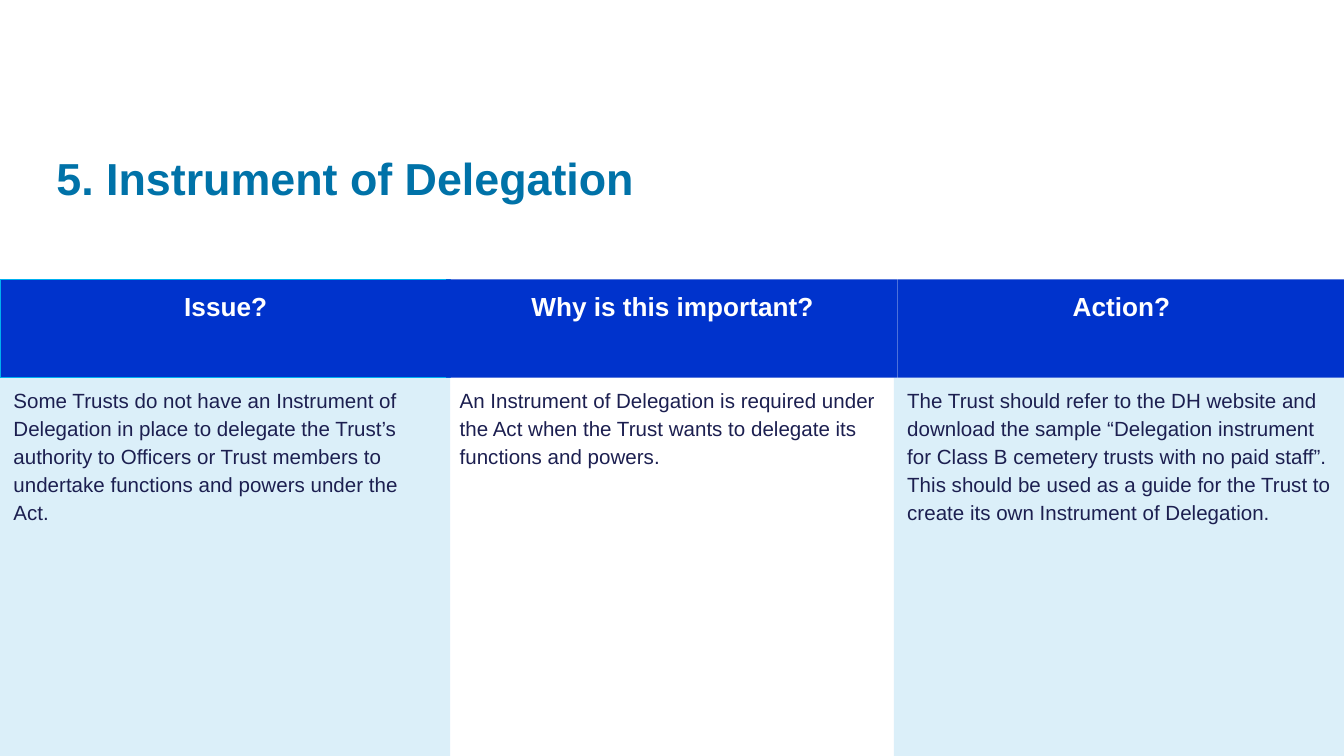
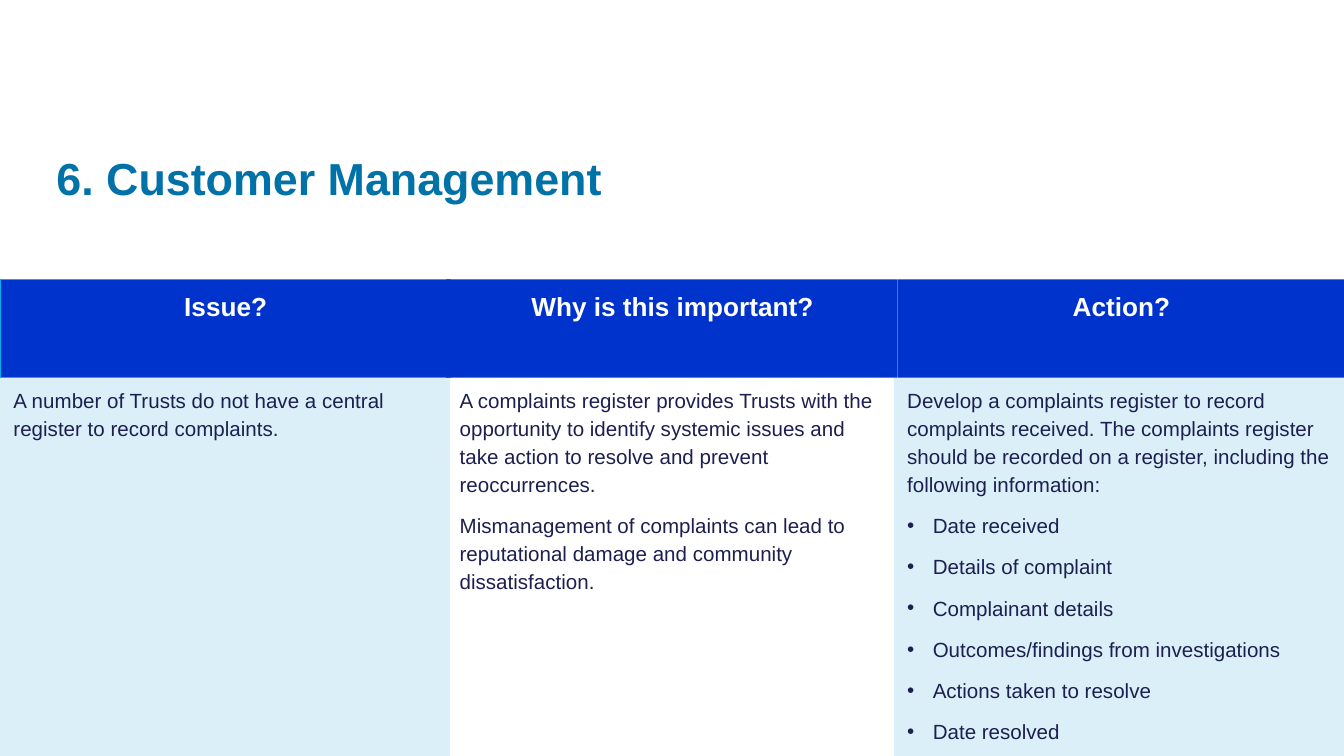
from lxml import etree
from pptx import Presentation
from pptx.dml.color import RGBColor
from pptx.enum import shapes, text
from pptx.oxml import ns
from pptx.util import Inches, Pt

FONT = "Arial"
BLUE, TITLE_BLUE, PALE, NAVY, WHITE, CYAN = (
    "0033CC", "0072A8", "DBEFF9", "1C1F50", "FFFFFF", "00B0F0")
HEADINGS = ["Issue?", "Why is this important?", "Action?"]

# A 16:9 slide
SLIDE_WIDTH = 10
SLIDE_HEIGHT = SLIDE_WIDTH * 9 / 16

# Left edge and width of each column's heading and panel
HEADING_SPANS = [(0, 3.35), (3.32, 3.36), (6.68, 3.32)]
PANEL_SPANS = [(0, 3.35), (3.32, 3.35), (6.65, 3.35)]
PANEL_FILLS = [PALE, None, PALE]
HEADING_TOP, HEADING_HEIGHT = 2.08, 0.73
PANEL_TOP = HEADING_TOP + HEADING_HEIGHT
PANEL_HEIGHT = SLIDE_HEIGHT - PANEL_TOP
BULLET_INDENT = Inches(0.19)

TITLE_STYLE = {"size": Pt(24), "bold": True, "color": TITLE_BLUE}
TITLE_SPACING = {"line_spacing": 1.2, "space_after": Pt(2)}
HEADING_STYLE = {"size": Pt(14), "bold": True, "color": WHITE}
PANEL_STYLE = {"size": Pt(11), "bold": False, "color": NAVY}
BODY_SPACING = {"line_spacing": 1.14, "space_after": Pt(1)}

# Each column is a list of paragraphs; a leading bullet marks a list item
SLIDES = [
    ("5. Instrument of Delegation", [
        ["Some Trusts do not have an Instrument of Delegation in place to delegate "
         "the Trust’s authority to Officers or Trust members to undertake functions "
         "and powers under the Act."],
        ["An Instrument of Delegation is required under the Act when the Trust wants "
         "to delegate its functions and powers."],
        ["The Trust should refer to the DH website and download the sample "
         "“Delegation instrument for Class B cemetery trusts with no paid staff”. "
         "This should be used as a guide for the Trust to create its own Instrument "
         "of Delegation."],
    ]),
    ("6. Customer Management", [
        ["A number of Trusts do not have a central register to record complaints."],
        ["A complaints register provides Trusts with the opportunity to identify "
         "systemic issues and take action to resolve and prevent reoccurrences.",
         "Mismanagement of complaints can lead to reputational damage and community "
         "dissatisfaction."],
        ["Develop a complaints register to record complaints received. The complaints "
         "register should be recorded on a register, including the following "
         "information:",
         "•Date received", "•Details of complaint", "•Complainant details",
         "•Outcomes/findings from investigations", "•Actions taken to resolve",
         "•Date resolved"],
    ]),
]


def rgb(value):
    return RGBColor.from_string(value)


def set_all(target, values):
    for name, value in values.items():
        setattr(target, name, value)


def place(shape, left, top, width, height):
    set_all(shape, {"left": Inches(left), "top": Inches(top),
                    "width": Inches(width), "height": Inches(height)})


def set_bullet(paragraph, is_item):
    """Give the paragraph a hanging bullet, or none."""
    properties = paragraph._p.get_or_add_pPr()
    indent = BULLET_INDENT if is_item else 0
    properties.set("marL", str(indent))
    properties.set("indent", str(-indent))
    if is_item:
        font = etree.SubElement(properties, ns.qn("a:buFont"))
        font.set("typeface", FONT)
        etree.SubElement(properties, ns.qn("a:buChar")).set("char", "•")
    else:
        etree.SubElement(properties, ns.qn("a:buNone"))


def write(shape, lines, style, spacing, align, anchor):
    frame = shape.text_frame
    set_all(frame, {"word_wrap": True, "auto_size": text.MSO_AUTO_SIZE.NONE,
                    "vertical_anchor": anchor, "margin_right": Inches(0.09)})
    for number, line in enumerate(lines):
        paragraph = frame.add_paragraph() if number else frame.paragraphs[0]
        paragraph.text = line.removeprefix("•")
        set_all(paragraph, {**spacing, "alignment": align,
                            "space_before": Pt(6 if number else 0)})
        set_bullet(paragraph, line.startswith("•"))
        set_all(paragraph.font, {"name": FONT, "size": style["size"],
                                 "bold": style["bold"]})
        paragraph.font.color.rgb = rgb(style["color"])


def add_title(slide, title):
    shape = slide.shapes.title
    place(shape, 0.32, 1.02, 9.36, 0.52)
    write(shape, [title], TITLE_STYLE, TITLE_SPACING,
          text.PP_ALIGN.LEFT, text.MSO_ANCHOR.MIDDLE)


def add_heading(slide, heading, span, border=None):
    left, width = span
    shape = slide.shapes.add_shape(
        shapes.MSO_SHAPE.RECTANGLE, Inches(left), Inches(HEADING_TOP),
        Inches(width), Inches(HEADING_HEIGHT))
    shape.shadow.inherit = False
    shape.fill.solid()
    shape.fill.fore_color.rgb = rgb(BLUE)
    if border:
        shape.line.color.rgb = rgb(border)
        shape.line.width = Pt(0.75)
    else:
        shape.line.fill.background()
    write(shape, [heading], HEADING_STYLE, BODY_SPACING,
          text.PP_ALIGN.CENTER, text.MSO_ANCHOR.TOP)


def fill_panel(panel, lines, span, fill):
    left, width = span
    place(panel, left, PANEL_TOP, width, PANEL_HEIGHT)
    if fill:
        panel.fill.solid()
        panel.fill.fore_color.rgb = rgb(fill)
    write(panel, lines, PANEL_STYLE, BODY_SPACING,
          text.PP_ALIGN.LEFT, text.MSO_ANCHOR.TOP)


def add_issue_slide(presentation, title, columns):
    # The comparison layout has a title and four body placeholders
    slide = presentation.slides.add_slide(presentation.slide_layouts[4])
    add_title(slide, title)
    *panels, spare = list(slide.placeholders)[1:5]
    spare.element.getparent().remove(spare.element)
    for panel, *content in zip(panels, columns, PANEL_SPANS, PANEL_FILLS):
        fill_panel(panel, *content)
    for heading, span, border in zip(HEADINGS, HEADING_SPANS, [CYAN, None, None]):
        add_heading(slide, heading, span, border)


def main():
    presentation = Presentation()
    presentation.slide_width = Inches(SLIDE_WIDTH)
    presentation.slide_height = Inches(SLIDE_HEIGHT)
    for title, columns in SLIDES:
        add_issue_slide(presentation, title, columns)
    presentation.save("out.pptx")


if __name__ == "__main__":
    main()
